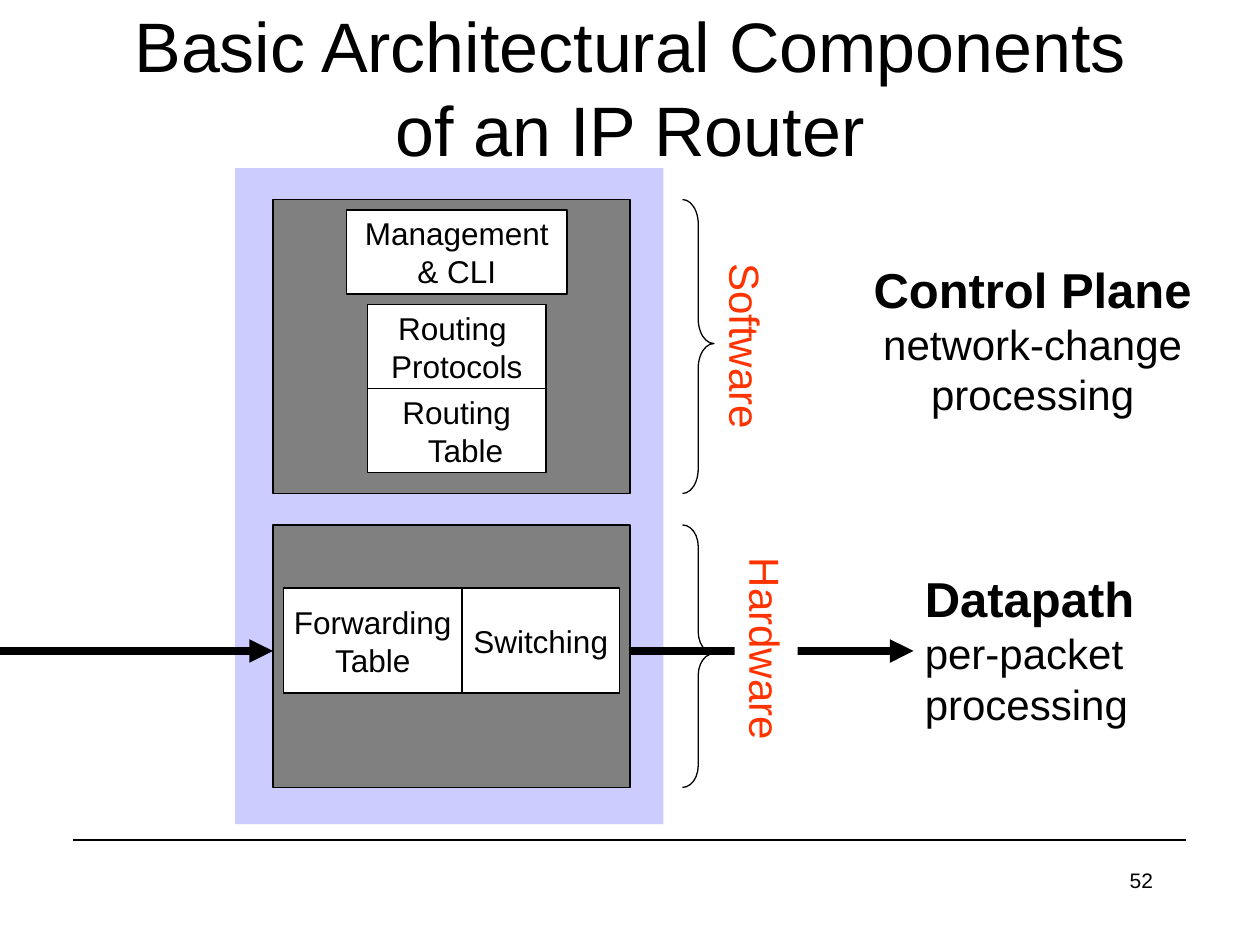
from dataclasses import dataclass

from lxml import etree
from pptx import Presentation
from pptx.dml.color import RGBColor
from pptx.enum.shapes import MSO_CONNECTOR, MSO_SHAPE
from pptx.enum.text import MSO_ANCHOR, MSO_AUTO_SIZE, PP_ALIGN
from pptx.oxml.ns import qn
from pptx.util import Emu, Inches, Pt

RECTANGLE, BRACE = MSO_SHAPE.RECTANGLE, MSO_SHAPE.RIGHT_BRACE
STRAIGHT = MSO_CONNECTOR.STRAIGHT
LEFT, CENTER, RIGHT = PP_ALIGN.LEFT, PP_ALIGN.CENTER, PP_ALIGN.RIGHT
TOP, MIDDLE = MSO_ANCHOR.TOP, MSO_ANCHOR.MIDDLE
GROW, FIXED = MSO_AUTO_SIZE.SHAPE_TO_FIT_TEXT, MSO_AUTO_SIZE.NONE


@dataclass(frozen=True)
class Theme:
    font: str = "Arial"
    ink: str = "000000"
    paper: str = "FFFFFF"
    chassis: str = "CCCCFF"
    plane: str = "808080"
    accent: str = "FF3300"
    title: int = 40
    heading: int = 28
    body: int = 24
    module: int = 18
    page: int = 12
    thin: float = 0.75
    thick: float = 4.5


@dataclass(frozen=True)
class Area:
    """Columns and rows on a grid of 120 by 90 cells."""
    col: float
    row: float
    cols: float
    rows: float


@dataclass(frozen=True)
class Line:
    text: str
    size: int
    bold: bool = False
    color: str = Theme.ink
    indent: float = 0


@dataclass(frozen=True)
class Module:
    area: Area
    lines: tuple[str, ...]
    last_indent: float = 0


@dataclass(frozen=True)
class Layer:
    """A grey plane with the brace and rotated label beside it."""
    plane: Area
    label: str
    label_area: Area
    label_fill: str | None
    curl: float


@dataclass(frozen=True)
class Rule:
    start: float
    end: float
    row: float
    width: float
    arrow: bool = False


THEME = Theme()
GRID_COLS = 120
BRACE_COL, BRACE_COLS = 65, 3

LAYERS = (
    Layer(Area(26, 19, 34, 28), "Software", Area(61.8, 30, 18.36, 6.12), None, 0.78),
    Layer(Area(26, 50, 34, 25), "Hardware", Area(62.64, 59.28, 20.64, 6), THEME.paper, 0.69),
)
MODULES = (
    Module(Area(44, 56, 15, 10), ("Switching",)),
    Module(Area(27, 56, 17, 10), ("Forwarding", "Table")),
    Module(Area(35, 37, 17, 8), ("Routing", "Table"), last_indent=0.14),
    Module(Area(35, 29, 17, 8), ("Routing ", "Protocols")),
    Module(Area(33, 20, 21, 8), ("Management", "& CLI")),
)
PACKET_FLOW = (
    Rule(60, 87, 62, THEME.thick, arrow=True),
    Rule(0, 26, 62, THEME.thick, arrow=True),
)
FOOTER_RULE = Rule(7, 113, 80, THEME.thin)

deck = Presentation()
deck.slide_width, deck.slide_height = Inches(10), Inches(7.5)
CELL = deck.slide_width / GRID_COLS
slide = deck.slides.add_slide(deck.slide_layouts[6])


def cells(*counts: float) -> list[Emu]:
    return [Emu(round(count * CELL)) for count in counts]


def place(area: Area) -> list[Emu]:
    return cells(area.col, area.row, area.cols, area.rows)


def write(shape, lines: list[Line], align=CENTER, anchor=TOP, wrap=False, fit=GROW) -> None:
    frame = shape.text_frame
    settings = {"word_wrap": wrap, "auto_size": fit, "vertical_anchor": anchor}
    for key, value in settings.items():
        setattr(frame, key, value)
    for index, line in enumerate(lines):
        paragraph = frame.add_paragraph() if index else frame.paragraphs[0]
        paragraph.text = line.text
        paragraph.alignment = align
        if line.indent:
            paragraph._p.get_or_add_pPr().set("marL", str(Inches(line.indent)))
        for run in paragraph.runs:
            style = {"name": THEME.font, "size": Pt(line.size), "bold": line.bold}
            for key, value in style.items():
                setattr(run.font, key, value)
            run.font.color.rgb = RGBColor.from_string(line.color)


def add_text(area: Area, lines: list[Line], **layout):
    box = slide.shapes.add_textbox(*place(area))
    write(box, lines, **layout)
    return box


def add_figure(area: Area, kind=RECTANGLE, fill: str | None = None, outlined: bool = True):
    figure = slide.shapes.add_shape(kind, *place(area))
    figure.shadow.inherit = False
    if fill:
        figure.fill.solid()
        figure.fill.fore_color.rgb = RGBColor.from_string(fill)
    else:
        figure.fill.background()
    if outlined:
        figure.line.color.rgb = RGBColor.from_string(THEME.ink)
        figure.line.width = Pt(THEME.thin)
    else:
        figure.line.fill.background()
    return figure


def add_rule(rule: Rule) -> None:
    line = slide.shapes.add_connector(
        STRAIGHT, *cells(rule.start, rule.row, rule.end, rule.row))
    line.line.color.rgb = RGBColor.from_string(THEME.ink)
    line.line.width = Pt(rule.width)
    if rule.arrow:
        etree.SubElement(line.line._get_or_add_ln(), qn("a:tailEnd"), type="triangle")
    etree.SubElement(line._element.spPr, qn("a:effectLst"))


def add_module(module: Module) -> None:
    last = len(module.lines) - 1
    lines = [Line(text, THEME.module, indent=module.last_indent if i == last else 0)
             for i, text in enumerate(module.lines)]
    write(add_figure(module.area, fill=THEME.paper), lines, anchor=MIDDLE, fit=FIXED)


def add_brace_and_label(layer: Layer) -> None:
    plane = layer.plane
    brace = add_figure(Area(BRACE_COL, plane.row, BRACE_COLS, plane.rows), BRACE)
    brace.adjustments[0], brace.adjustments[1] = layer.curl, 0.49
    label = add_figure(layer.label_area, fill=layer.label_fill, outlined=False)
    write(label, [Line(layer.label, THEME.body, color=THEME.accent)], align=LEFT)
    label.rotation = 90


def summary(heading: str, *details: str) -> list[Line]:
    return [Line(heading, THEME.heading, bold=True),
            *(Line(detail, THEME.body) for detail in details)]


add_rule(FOOTER_RULE)
add_text(Area(86, 82, 25, 6), [Line("52", THEME.page)], align=RIGHT, wrap=True, fit=FIXED)
add_figure(Area(22.4, 16, 40.8, 62.5), fill=THEME.chassis, outlined=False)
for flow in PACKET_FLOW:
    add_rule(flow)
for layer in LAYERS:
    add_figure(layer.plane, fill=THEME.plane)
add_text(Area(9, 0.7, 102, 15),
         [Line("Basic Architectural Components\vof an IP Router", THEME.title)],
         anchor=MIDDLE, wrap=True, fit=FIXED)
add_text(Area(81.8, 24.1, 33.1, 16.6),
         summary("Control Plane", "network-change", "processing"))
add_text(Area(86.9, 53.6, 23, 16.6),
         summary("Datapath", "per-packet", "processing"), align=LEFT)
for module in MODULES:
    add_module(module)
for layer in LAYERS:
    add_brace_and_label(layer)

deck.save("out.pptx")
